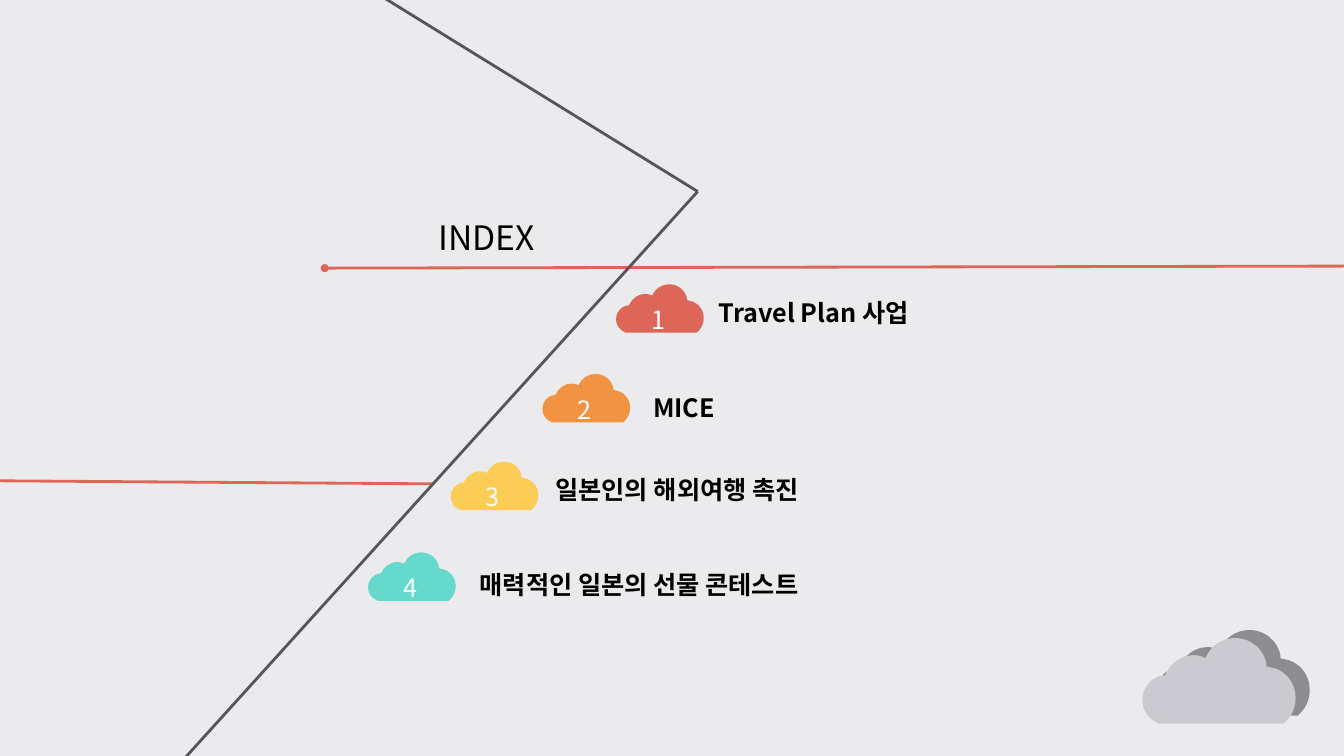
from lxml import etree
from pptx import Presentation
from pptx import util as u
from pptx.dml.color import RGBColor
from pptx.enum import shapes, text
from pptx.oxml import ns

PX = 9144  # EMU per px, 100 px to the inch
FONT = "Noto Sans CJK KR"
BACKGROUND = RGBColor(0xEB, 0xEB, 0xED)
BLACK = RGBColor(0x00, 0x00, 0x00)
WHITE = RGBColor(0xFF, 0xFF, 0xFF)
RED = RGBColor(0xDE, 0x66, 0x58)
ORANGE = RGBColor(0xF2, 0x93, 0x43)
YELLOW = RGBColor(0xFB, 0xCC, 0x56)
TEAL = RGBColor(0x65, 0xD9, 0xCC)
SLATE = RGBColor(0x56, 0x56, 0x58)
DARK_GREY = RGBColor(0x8D, 0x8D, 0x8F)
LIGHT_GREY = RGBColor(0xCA, 0xCA, 0xD0)

# Cloud outline on a 152 x 85 grid: one point is a line, three are a curve
CLOUD_SIZE = (152, 85)
CLOUD_START = (92, 0)
CLOUD_STEPS = [
    [(108, 0), (120, 11), (123, 25)], [(123, 28)], [(127, 29)],
    [(141, 31), (152, 44), (152, 59)], [(152, 68), (149, 76), (143, 82)],
    [(140, 85)], [(16, 85)], [(15, 84)],
    [(6, 80), (0, 72), (0, 61)], [(0, 49), (9, 39), (20, 37)],
    [(23, 37)], [(23, 36)],
    [(28, 25), (38, 17), (51, 17)], [(55, 17), (59, 18), (63, 20)], [(63, 19)],
    [(68, 8), (79, 0), (92, 0)],
]

# Cloud left and top, label left, top and width
ITEMS = [
    ("1", "Travel Plan 사업", RED, (611, 282), (703, 290, 239)),
    ("2", "MICE", ORANGE, (538, 371), (638, 384, 299)),
    ("3", "일본인의 해외여행 촉진", YELLOW, (447, 458), (541, 466, 309)),
    ("4", "매력적인 일본의 선물 콘테스트", TEAL, (365, 548), (466, 560, 396)),
]


def emu(*lengths):
    return [u.Emu(length * PX) for length in lengths]


def set_text(shape, words, size, color, bold=False, wrap=True):
    frame = shape.text_frame
    frame.text = words
    frame_format = {"word_wrap": wrap, "auto_size": text.MSO_AUTO_SIZE.NONE,
                    "vertical_anchor": text.MSO_ANCHOR.TOP}
    for name, value in frame_format.items():
        setattr(frame, name, value)
    paragraph = frame.paragraphs[0]
    paragraph.alignment = text.PP_ALIGN.LEFT
    paragraph.line_spacing = 1.0
    paragraph.space_before = u.Pt(0)
    font = paragraph.runs[0].font
    for name, value in {"name": FONT, "size": u.Pt(size), "bold": bold}.items():
        setattr(font, name, value)
    font.color.rgb = color
    # East Asian glyphs use the same face
    etree.SubElement(font._element, ns.qn("a:ea")).set("typeface", FONT)


def paint(shape, color):
    shape.shadow.inherit = False
    shape.fill.solid()
    shape.fill.fore_color.rgb = color
    shape.line.fill.background()


def add_line(slide, start, end, color):
    line = slide.shapes.add_connector(
        shapes.MSO_CONNECTOR.STRAIGHT, *emu(*start, *end))
    line.line.color.rgb = color
    line.line.width = u.Pt(2)
    etree.SubElement(line._element.spPr, ns.qn("a:effectLst"))


def add_cloud(parent, left, top, width, height, color):
    builder = parent.build_freeform(0, 0, scale=PX)
    builder.add_line_segments([(width, 0), (width, height), (0, height)])
    cloud = builder.convert_to_shape(*emu(left, top))
    # Swap the box outline for the curved one
    outline = cloud._element.find(".//" + ns.qn("a:path"))
    for child in list(outline):
        outline.remove(child)
    for name, value in zip("wh", CLOUD_SIZE):
        outline.set(name, str(value))
    steps = [("a:moveTo", [CLOUD_START])]
    steps += [("a:cubicBezTo" if len(points) == 3 else "a:lnTo", points)
              for points in CLOUD_STEPS]
    for tag, points in steps:
        step = etree.SubElement(outline, ns.qn(tag))
        for x, y in points:
            point = etree.SubElement(step, ns.qn("a:pt"))
            point.set("x", str(x))
            point.set("y", str(y))
    etree.SubElement(outline, ns.qn("a:close"))
    paint(cloud, color)


def add_title(slide, left, top, width, height):
    title = slide.shapes.title
    title.left, title.top, title.width, title.height = emu(left, top, width, height)
    set_text(title, "INDEX", 24, BLACK)


def add_road(slide):
    """Bent dark line with a red rule to each side."""
    corner = (692, 190)
    add_line(slide, (322, 266), (1333, 264), RED)
    add_line(slide, (365, -12), corner, SLATE)
    add_line(slide, (-3, 477), (430, 480), RED)
    add_line(slide, (178, 758), corner, SLATE)
    dot = slide.shapes.add_shape(shapes.MSO_SHAPE.OVAL, *emu(318, 262, 8, 8))
    paint(dot, RED)


def add_item(slide, number, words, color, cloud_at, label_at):
    left, top = cloud_at
    group = slide.shapes.add_group_shape().shapes
    add_cloud(group, left, top, 87, 48, color)
    badge = group.add_textbox(*emu(left + 25, top + 15, 37, 40))
    set_text(badge, number, 18, WHITE, wrap=False)
    label = slide.shapes.add_textbox(*emu(*label_at, 40))
    set_text(label, words, 18, BLACK, bold=True)


def add_corner_clouds(slide, left, top):
    width, height = CLOUD_SIZE
    add_cloud(slide.shapes, left + 14, top - 8, width, height, DARK_GREY)
    add_cloud(slide.shapes, left, top, width, height, LIGHT_GREY)


def build_index(presentation):
    slide = presentation.slides.add_slide(presentation.slide_layouts[5])
    slide.background.fill.solid()
    slide.background.fill.fore_color.rgb = BACKGROUND
    add_road(slide)
    add_title(slide, 425, 210, 133, 50)
    for item in ITEMS:
        add_item(slide, *item)
    add_corner_clouds(slide, 1133, 633)


def main():
    presentation = Presentation()
    presentation.slide_width, presentation.slide_height = emu(1333, 750)
    build_index(presentation)
    presentation.save("out.pptx")


if __name__ == "__main__":
    main()
